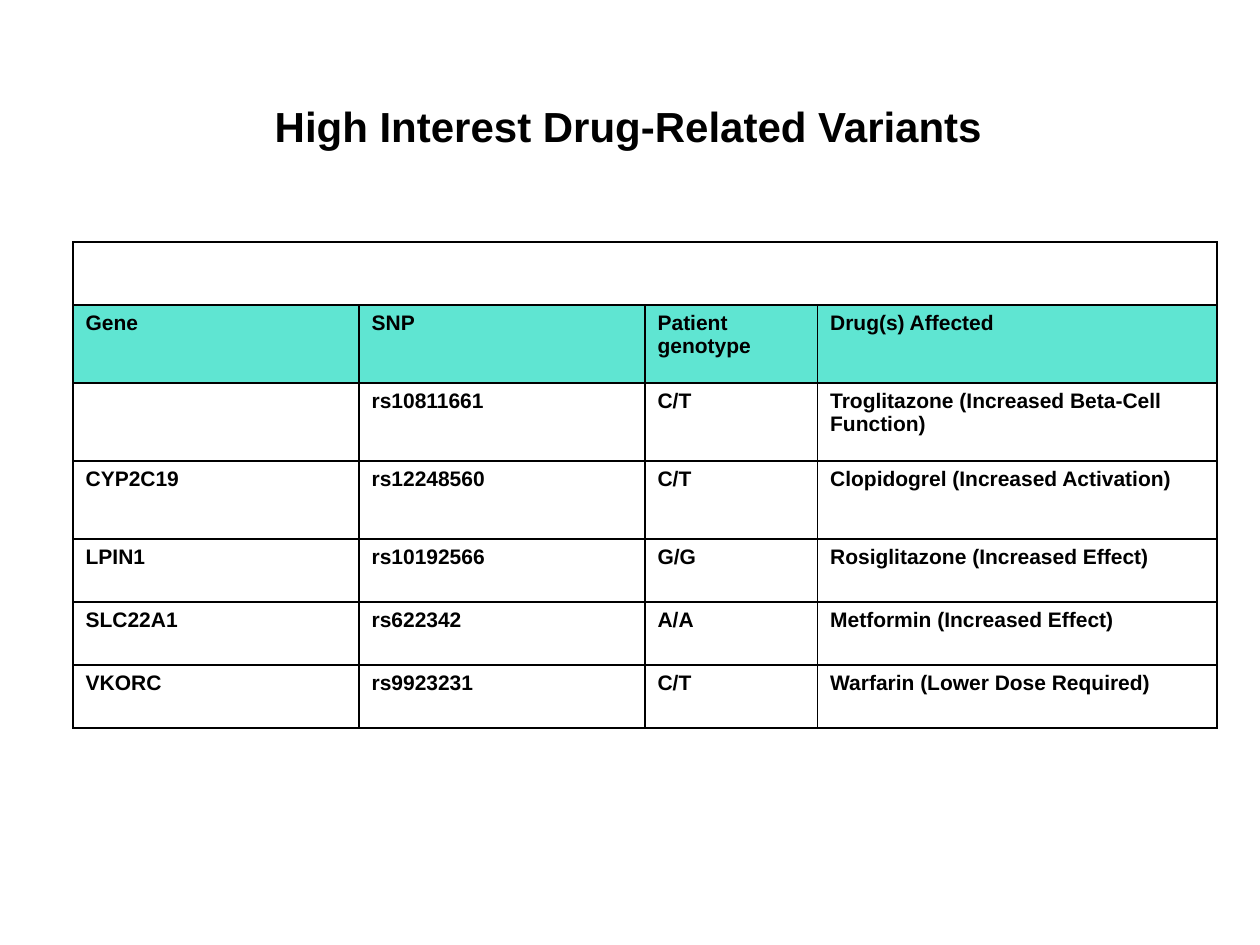
from dataclasses import dataclass

from lxml.etree import SubElement
from pptx import Presentation
from pptx.dml.color import RGBColor
from pptx.enum.text import MSO_ANCHOR, PP_ALIGN
from pptx.oxml.ns import qn
from pptx.util import Inches, Pt


@dataclass(frozen=True)
class Theme:
    font: str = "Arial"
    ink: str = "000000"
    paper: str = "FFFFFF"
    header: str = "5FE5D2"
    title_size: int = 24
    cell_size: int = 12
    border_width: int = 1


THEME = Theme()
COLUMN_WIDTHS = (2.27, 2.27, 1.37, 3.17)
ROW_HEIGHTS = (0.5, 0.62, 0.62, 0.62, 0.5, 0.5, 0.5)
HEADINGS = ("Gene", "SNP", "Patient genotype", "Drug(s) Affected")
VARIANTS = (
    ("", "rs10811661", "C/T", "Troglitazone (Increased Beta-Cell Function)"),
    ("CYP2C19", "rs12248560", "C/T", "Clopidogrel (Increased Activation)"),
    ("LPIN1", "rs10192566", "G/G", "Rosiglitazone (Increased Effect)"),
    ("SLC22A1", "rs622342", "A/A", "Metformin (Increased Effect)"),
    ("VKORC", "rs9923231", "C/T", "Warfarin (Lower Dose Required)"),
)


def write(frame, text, *, size, color=THEME.ink, bold=True, align=PP_ALIGN.LEFT):
    frame.text = text
    paragraph = frame.paragraphs[0]
    paragraph.alignment = align
    font = paragraph.font
    font.name = THEME.font
    font.size = Pt(size)
    font.bold = bold
    font.color.rgb = RGBColor.from_string(color)


def add_title(slide, text):
    title = slide.shapes.title
    title.left, title.top = Inches(2.08), Inches(0.75)
    title.width, title.height = Inches(6.08), Inches(0.5)
    frame = title.text_frame
    frame.word_wrap = True
    frame.vertical_anchor = MSO_ANCHOR.TOP
    write(frame, text, size=THEME.title_size)


def set_borders(cell):
    """Draw all four sides; borders must precede the fill in the cell's XML."""
    properties = cell._tc.get_or_add_tcPr()
    for side in ("a:lnL", "a:lnR", "a:lnT", "a:lnB"):
        line = SubElement(properties, qn(side), w=str(Pt(THEME.border_width)))
        fill = SubElement(line, qn("a:solidFill"))
        SubElement(fill, qn("a:srgbClr"), val=THEME.ink)


def format_cell(cell, text, fill):
    set_borders(cell)
    cell.fill.solid()
    cell.fill.fore_color.rgb = RGBColor.from_string(fill)
    write(cell.text_frame, text, size=THEME.cell_size)


def add_variant_table(slide):
    banner = ("",) * len(HEADINGS)
    rows = (banner, HEADINGS, *VARIANTS)
    table = slide.shapes.add_table(
        len(rows), len(HEADINGS), Inches(0.58), Inches(1.92),
        Inches(sum(COLUMN_WIDTHS)), Inches(sum(ROW_HEIGHTS)),
    ).table
    table.first_row = table.horz_banding = False
    for column, width in zip(table.columns, COLUMN_WIDTHS):
        column.width = Inches(width)
    for row, height in zip(table.rows, ROW_HEIGHTS):
        row.height = Inches(height)
    for row, values in zip(table.rows, rows):
        fill = THEME.header if values is HEADINGS else THEME.paper
        for cell, value in zip(row.cells, values):
            format_cell(cell, value, fill)
    table.cell(0, 0).merge(table.cell(0, len(HEADINGS) - 1))


def main():
    deck = Presentation()
    deck.slide_width, deck.slide_height = Inches(10), Inches(7.5)
    slide = deck.slides.add_slide(deck.slide_layouts.get_by_name("Title Only"))
    add_title(slide, "High Interest Drug-Related Variants")
    add_variant_table(slide)
    deck.save("out.pptx")


if __name__ == "__main__":
    main()
